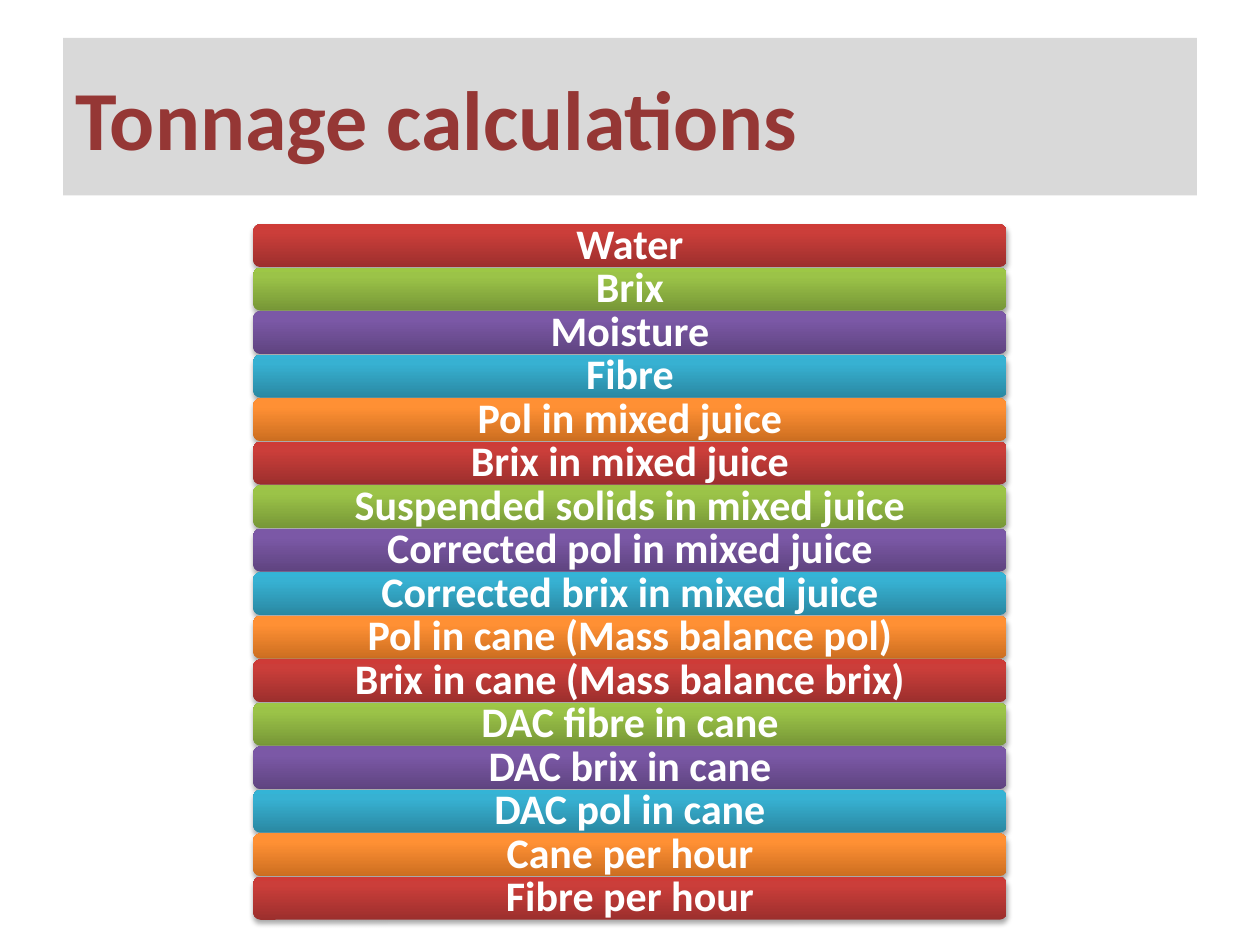
import copy
from dataclasses import dataclass

import lxml.etree
import pptx
import pptx.dml.color
import pptx.enum.shapes
import pptx.enum.text
import pptx.oxml.ns
import pptx.util

Inches = pptx.util.Inches
qn = pptx.oxml.ns.qn

FONT = "Calibri"
COLORS = {"title": "953735", "title_fill": "D9D9D9", "text": "FFFFFF", "shadow": "000000"}
STOP_POSITIONS = (0, 0.8, 1)
# Gradient colours from the bottom to the top of a bar
GRADIENTS = {
    "red": ("9C2F2D", "CB3E3A", "CE3B37"),
    "green": ("779737", "9BC348", "9DC746"),
    "purple": ("5F4480", "7B58A6", "7C57A8"),
    "blue": ("2A88A2", "37B1D2", "34B4D6"),
    "orange": ("CC6E20", "FF9034", "FF9136"),
}
CALCULATIONS = (
    "Water",
    "Brix",
    "Moisture",
    "Fibre",
    "Pol in mixed juice",
    "Brix in mixed juice",
    "Suspended solids in mixed juice",
    "Corrected pol in mixed juice",
    "Corrected brix in mixed juice",
    "Pol in cane (Mass balance pol)",
    "Brix in cane (Mass balance brix)",
    "DAC fibre in cane",
    "DAC brix in cane",
    "DAC pol in cane",
    "Cane per hour",
    "Fibre per hour",
)
BAR_LEFT, BAR_WIDTH, BAR_HEIGHT = 2.01, 5.98, 0.34
FIRST_TOP, LAST_TOP = 1.78, 6.96


@dataclass
class Bar:
    text: str
    top: float
    gradient: tuple[str, ...]


def rgb(value: str) -> pptx.dml.color.RGBColor:
    return pptx.dml.color.RGBColor.from_string(value)


def format_paragraph(paragraph, size: int, color: str, alignment) -> None:
    paragraph.alignment = alignment
    paragraph.font.name = FONT
    paragraph.font.size = pptx.util.Pt(size)
    paragraph.font.bold = True
    paragraph.font.color.rgb = rgb(color)


def set_gradient(shape, colors: tuple[str, ...]) -> None:
    shape.fill.gradient()
    shape.fill.gradient_angle = 90
    stop_list = shape._element.spPr.find(qn("a:gradFill")).find(qn("a:gsLst"))
    stop_list.append(copy.deepcopy(stop_list[-1]))
    for stop, position, color in zip(shape.fill.gradient_stops, STOP_POSITIONS, colors):
        stop.position = position
        stop.color.rgb = rgb(color)


def add_shadow(shape) -> None:
    shape.shadow.inherit = False
    effects = shape._element.spPr.find(qn("a:effectLst"))
    shadow = lxml.etree.SubElement(
        effects, qn("a:outerShdw"), blurRad="40000", dist="23000", dir="5400000", rotWithShape="0"
    )
    color = lxml.etree.SubElement(shadow, qn("a:srgbClr"), val=COLORS["shadow"])
    lxml.etree.SubElement(color, qn("a:alpha"), val="35000")


def add_title(slide, text: str) -> None:
    title = slide.shapes.title
    title.left, title.top = Inches(0.5), Inches(0.3)
    title.width, title.height = Inches(9), Inches(1.25)
    title.fill.solid()
    title.fill.fore_color.rgb = rgb(COLORS["title_fill"])
    title.text_frame.text = text
    title.text_frame.vertical_anchor = pptx.enum.text.MSO_ANCHOR.MIDDLE
    format_paragraph(
        title.text_frame.paragraphs[0], 48, COLORS["title"], pptx.enum.text.PP_ALIGN.LEFT
    )


def add_bar(slide, bar: Bar) -> None:
    shape = slide.shapes.add_shape(
        pptx.enum.shapes.MSO_SHAPE.ROUNDED_RECTANGLE,
        Inches(BAR_LEFT), Inches(bar.top), Inches(BAR_WIDTH), Inches(BAR_HEIGHT),
    )
    set_gradient(shape, bar.gradient)
    shape.line.fill.background()
    add_shadow(shape)
    frame = shape.text_frame
    frame.text = bar.text
    frame.word_wrap = True
    frame.vertical_anchor = pptx.enum.text.MSO_ANCHOR.MIDDLE
    frame.margin_top = frame.margin_bottom = 0
    paragraph = frame.paragraphs[0]
    paragraph.line_spacing = 0.9
    format_paragraph(paragraph, 24, COLORS["text"], pptx.enum.text.PP_ALIGN.CENTER)


def main() -> None:
    presentation = pptx.Presentation()
    presentation.slide_width, presentation.slide_height = Inches(10), Inches(7.5)
    slide = presentation.slides.add_slide(presentation.slide_layouts.get_by_name("Title Only"))

    add_title(slide, "Tonnage calculations")

    # Evenly spaced bars that cycle through the gradients
    gradients = tuple(GRADIENTS.values())
    pitch = (LAST_TOP - FIRST_TOP) / (len(CALCULATIONS) - 1)
    for index, text in enumerate(CALCULATIONS):
        add_bar(slide, Bar(text, FIRST_TOP + index * pitch, gradients[index % len(gradients)]))

    presentation.save("out.pptx")


if __name__ == "__main__":
    main()
